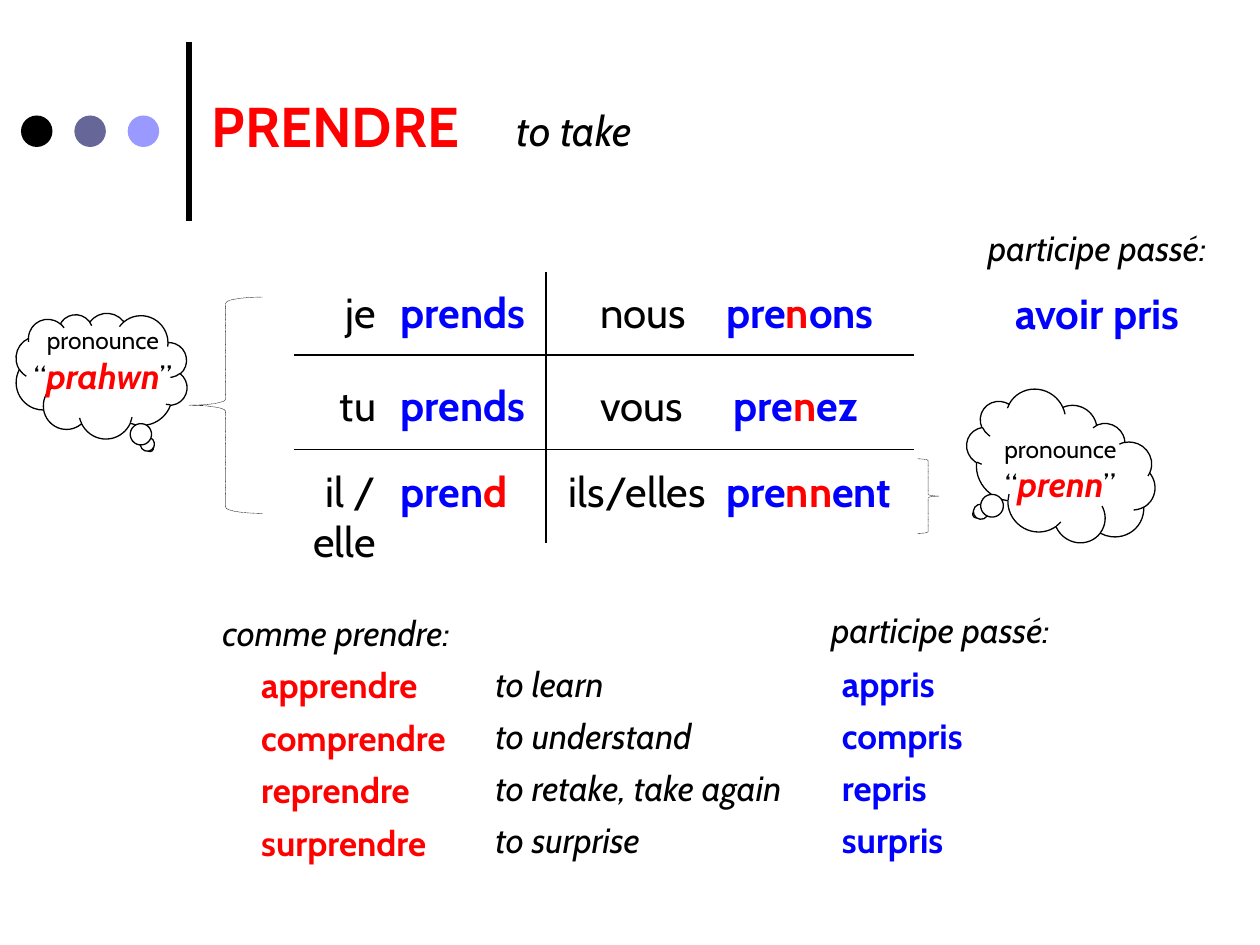
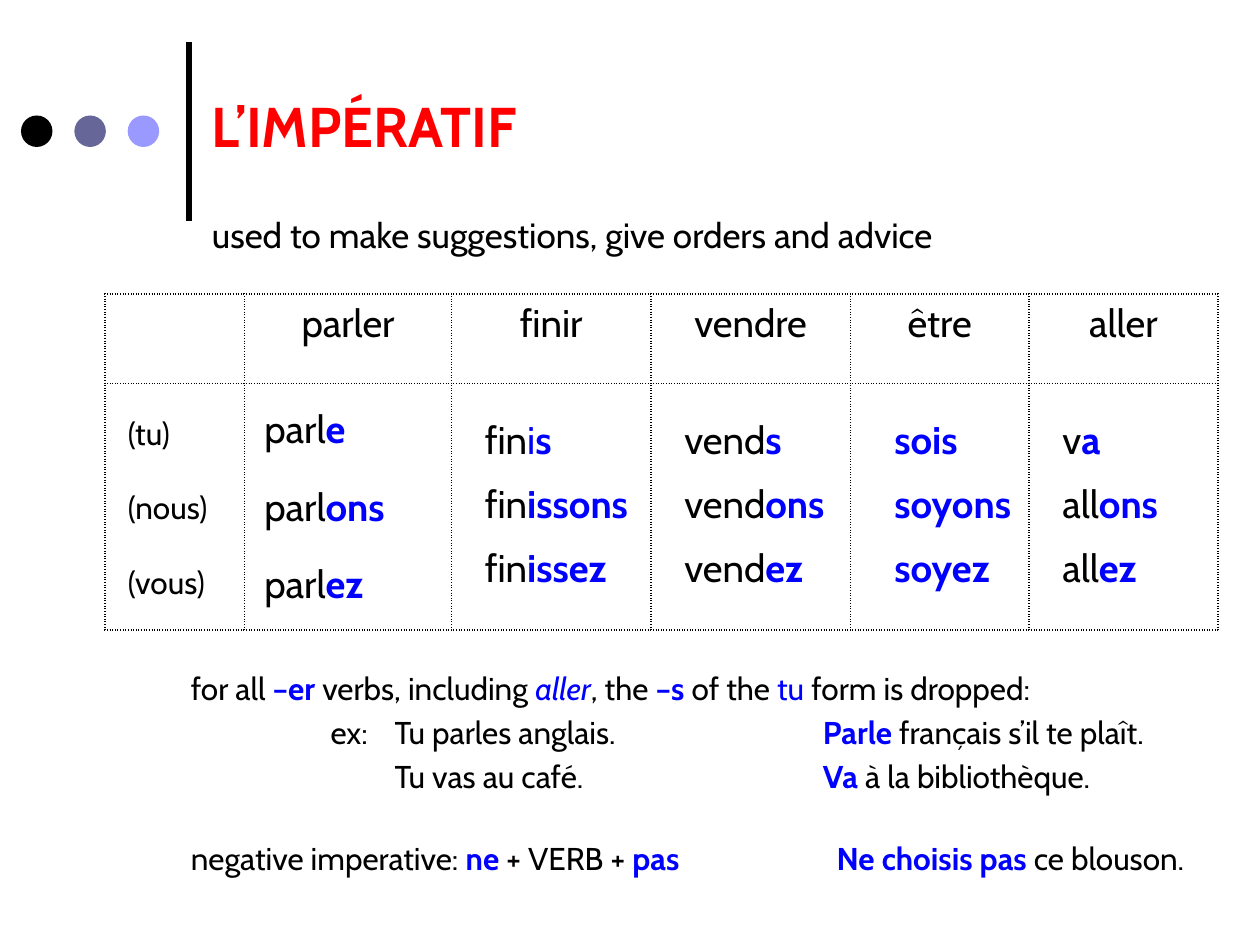
from lxml.etree import SubElement
from pptx import Presentation
from pptx.dml.color import RGBColor
from pptx.enum.dml import MSO_LINE
from pptx.enum.shapes import MSO_CONNECTOR, MSO_SHAPE as Shape
from pptx.enum.text import PP_ALIGN as Align
from pptx.oxml.ns import qn
from pptx.util import Inches, Pt

FONT = "Cabin"
BLACK, WHITE, RED, BLUE = "000000", "FFFFFF", "FF0000", "0000FF"
DOTS = (BLACK, "666699", "9999FF")
COLS, ROWS = 120, 90
UNIT = Inches(10) // COLS
STYLES = {
    "K": (BLACK, False, False),
    "I": (BLACK, False, True),
    "B": (BLUE, True, False),
    "b": (BLUE, False, False),
    "i": (BLUE, False, True),
    "R": (RED, True, False),
    "X": (RED, True, True),
}


def rgb(color):
    """Turn a hex string into a colour."""
    return RGBColor.from_string(color)


def emu(*cells):
    """Turn grid cells into lengths."""
    return [round(c * UNIT) for c in cells]


def inside(box, x, y, w, h):
    """Place a box relative to the corner of another one."""
    return box[0] + x, box[1] + y, w, h


def add_runs(p, markup, size):
    """Fill a paragraph from 'style:text' pieces joined by bars; a style may carry its own size."""
    for piece in markup.split("|"):
        key, _, text = piece.partition(":")
        color, bold, italic = STYLES[key[0]]
        r = p.add_run()
        r.text = text
        f = r.font
        f.name, f.bold, f.italic = FONT, bold, italic
        f.size = Pt(int(key[1:] or size))
        f.color.rgb = rgb(color)


def set_tabs(p, stops):
    """Give a paragraph its tab stops, in cells."""
    tabs = SubElement(p._p.get_or_add_pPr(), qn("a:tabLst"))
    for pos in emu(*stops):
        SubElement(tabs, qn("a:tab"), pos=str(pos), algn="l")


def add_text(shapes, box, *lines, size=20, align=Align.LEFT, gap=0, spacing=None, tabs=()):
    """Add a text box with one paragraph for each line."""
    tf = shapes.add_textbox(*emu(*box)).text_frame
    tf.word_wrap = True
    for i, markup in enumerate(lines):
        p = tf.add_paragraph() if i else tf.paragraphs[0]
        p.alignment = align
        p.space_before = Pt(gap if i else 0)
        if spacing:
            p.line_spacing = spacing
        if tabs:
            set_tabs(p, tabs)
        add_runs(p, markup, size)
    return tf


def add_line(s, x1, y1, x2, y2, width=0.75):
    """Draw a straight black line."""
    c = s.shapes.add_connector(MSO_CONNECTOR.STRAIGHT, *emu(x1, y1, x2, y2))
    c.line.color.rgb = rgb(BLACK)
    c.line.width = Pt(width)
    SubElement(c._element.spPr, qn("a:effectLst"))


def add_figure(shapes, kind, box, fill=None, line=None, adj=(), flip=False):
    """Add a preset shape without a shadow."""
    sp = shapes.add_shape(kind, *emu(*box))
    sp.shadow.inherit = False
    if fill:
        sp.fill.solid()
        sp.fill.fore_color.rgb = rgb(fill)
    else:
        sp.fill.background()
    if line:
        sp.line.color.rgb = rgb(BLACK)
        sp.line.width = Pt(line)
    else:
        sp.line.fill.background()
    for i, value in enumerate(adj):
        sp.adjustments[i] = value
    if flip:
        sp._element.spPr.xfrm.set("flipH", "1")
    return sp


def add_title(s, box, title):
    """Draw the dots, the upright bar and the red title."""
    add_line(s, box[0] + 18, box[1] + 21, box[0] + 18, box[1] + 4, 3)
    for i, color in enumerate(DOTS):
        add_figure(s.shapes, Shape.OVAL, inside(box, 2 + 5.08 * i, 11, 3, 3), color)
    add_text(s.shapes, inside(box, 19, 8.1, 69, 7.7), "R:" + title, size=32)


def add_conjugation(s, box):
    """Write the six verb forms around the ruled lines."""
    x, y, w, h = box
    for row in (7.9, 16.9):
        add_line(s, x + 4, y + row, x + w, y + row)
    add_line(s, x + 28, y, x + 28, y + h)
    forms = (
        (0.8, "je", "B:prends", 32, "nous", 44, "B:pre|R:n|B:ons"),
        (9.7, "tu", "B:prends", 32, "vous", 44.7, "B:pre|R:n|B:ez"),
        (17.8, "il / elle", "B:pren|R:d", 29, "ils/elles", 44, "B:pre|R:nn|B:ent"),
    )
    for top, one, verb, many_x, many, verbs_x, verbs in forms:
        add_text(s.shapes, inside(box, 0, top, 13, 6), "K:" + one, size=24, align=Align.RIGHT)
        add_text(s.shapes, inside(box, 13, top, 15, 6), verb, size=24)
        add_text(s.shapes, inside(box, many_x, top, 16, 6), "K:" + many, size=24)
        add_text(s.shapes, inside(box, verbs_x, top, 25, 6), verbs, size=24)


def add_sound(s, box, sound, text_box, turn, flip=False):
    """Group a thought cloud with the way a form is pronounced."""
    shapes = s.shapes.add_group_shape().shapes
    cloud = add_figure(shapes, Shape.CLOUD_CALLOUT, box, WHITE, 0.75, (-0.208, 0.625), flip)
    cloud.rotation = turn
    add_text(shapes, inside(box, *text_box), "K14:pronounce", f"K:“|X20:{sound}|K:”",
             size=18, align=Align.CENTER)


def add_brace(s, box, flip=False):
    """Draw a dotted brace."""
    sp = add_figure(s.shapes, Shape.LEFT_BRACE, box, line=0.25, adj=(0.083, 0.5), flip=flip)
    sp.line.dash_style = MSO_LINE.ROUND_DOT


def add_family(s, box):
    """List the verbs of the same family with meanings and participles."""
    verbs = (
        ("apprendre", "to learn", "appris"),
        ("comprendre", "to understand", "compris"),
        ("reprendre", "to retake, take again", "repris"),
        ("surprendre", "to surprise", "surpris"),
    )
    names = ["R:" + name for name, _, _ in verbs]
    tf = add_text(s.shapes, inside(box, 0, 0.2, 26, 28), "I:comme prendre:", *names, gap=6)
    for p in tf.paragraphs[1:]:
        p._p.get_or_add_pPr().set("marL", str(emu(3.7)[0]))
    add_text(s.shapes, inside(box, 58, 0, 25, 5.3), "I:participe passé:")
    for i, (_, meaning, participle) in enumerate(verbs):
        top = 5.15 + 4.95 * i
        add_text(s.shapes, inside(box, 26, top, 30, 5.3), "I:" + meaning)
        add_text(s.shapes, inside(box, 59, top, 25, 5.3), "B:" + participle)


def add_participle(s, box):
    """Write the past participle under its heading."""
    add_text(s.shapes, inside(box, 0, 0, 27, 5.3), "I:participe passé:", align=Align.CENTER)
    add_text(s.shapes, inside(box, 0, 5.8, 27, 6), "B:avoir pris", size=24, align=Align.CENTER)


def set_borders(cell):
    """Give a cell dotted borders on all sides."""
    pr = cell._tc.get_or_add_tcPr()
    for i, side in enumerate(("lnL", "lnR", "lnT", "lnB")):
        ln = pr.makeelement(qn("a:" + side), {"w": str(Pt(1))})
        fill = SubElement(ln, qn("a:solidFill"))
        SubElement(fill, qn("a:srgbClr"), val=BLACK)
        SubElement(ln, qn("a:prstDash"), val="dot")
        pr.insert(i, ln)


def add_imperatives(s, box):
    """Build the table of imperatives and the columns of forms over it."""
    widths, heights = (13.3, 19.7, 19, 19, 17, 18), (8.5, 23.5)
    heads = ("", "parler", "finir", "vendre", "être", "aller")
    table = s.shapes.add_table(2, len(heads), *emu(*box)).table
    table.first_row = table.horz_banding = False
    for col, width in zip(table.columns, emu(*widths)):
        col.width = width
    for row, height in zip(table.rows, emu(*heights)):
        row.height = height
    for cell in table.iter_cells():
        cell.fill.background()
        set_borders(cell)
    for cell, head in zip(table.rows[0].cells, heads):
        if head:
            p = cell.text_frame.paragraphs[0]
            p.alignment = Align.CENTER
            add_runs(p, "K:" + head, 22)
    add_text(s.shapes, inside(box, 1, 10.8, 12, 19), "K:(tu)", "K:(nous)", "K:(vous)",
             size=18, gap=21)
    columns = (
        (14, 10, 17, 18, "K:parl|B:e", "K:parl|B:ons", "K:parl|B:ez"),
        (35, 11, 19, 10.4, "K:fin|b:i|B:s", "K:fin|B:issons", "K:fin|B:issez"),
        (54, 11, 23, 10.4, "K:vend|B:s", "K:vend|B:ons", "K:vend|B:ez"),
        (74, 11, 16, 10.4, "B:sois", "B:soyons", "B:soyez"),
        (90, 11, 12, 10.4, "K:v|B:a", "K:all|B:ons", "K:all|B:ez"),
    )
    for x, y, w, gap, *forms in columns:
        add_text(s.shapes, inside(box, x, y, w, 19), *forms, size=22, gap=gap)


def add_rules(s, box):
    """Write the spelling rule, its examples and the negative form."""
    add_text(
        s.shapes, inside(box, 0, 0, 99, 13),
        "K:for all |B:–er |K:verbs, including |i:aller|K:, the |B:–s |K:of the |b:tu"
        "|K: form is dropped:",
        "K:\tex:\tTu parles anglais.\t|B:Parle|K: français s’il te plaît.",
        "K:\t\tTu vas au café.\t|B:Va |K:à la bibliothèque.",
        size=18, gap=8.7, spacing=0.75, tabs=(13.3, 19.4, 60.2))
    add_text(
        s.shapes, inside(box, 0, 16, 99, 5),
        "K:negative imperative: |B:ne|K: + VERB + |B:pas\tNe choisis pas |K:ce blouson.",
        size=18, spacing=0.8, tabs=(61.5,))


def build_prendre(s, box):
    """Lay out the slide on the verb prendre."""
    add_title(s, box, "PRENDRE")
    add_text(s.shapes, inside(box, 48, 9.4, 25, 6), "I:to take", size=24)
    add_conjugation(s, inside(box, 24, 25.9, 63, 25.8))
    add_family(s, inside(box, 20, 57.4, 96, 28))
    add_participle(s, inside(box, 91, 21, 27, 12))
    add_sound(s, inside(box, 1.5, 29.6, 16.4, 12.2), "prahwn", (-0.5, 0.8, 17.6, 8), 350.8, True)
    add_sound(s, inside(box, 91.7, 38.2, 18.4, 13), "prenn", (0.3, 2.5, 18, 8), 36.4)
    add_brace(s, inside(box, 18, 28.3, 7, 20.6))
    add_brace(s, inside(box, 87.4, 43.7, 2, 7.1), True)


def build_imperatif(s, box):
    """Lay out the slide on the imperative."""
    add_title(s, box, "L’IMPÉRATIF")
    add_text(s.shapes, inside(box, 19, 19.7, 86, 5.3),
             "K:used to make suggestions, give orders and advice")
    add_imperatives(s, inside(box, 10, 28, 106, 32))
    add_rules(s, inside(box, 17, 64, 99, 21))


def main():
    """Build and save the presentation."""
    prs = Presentation()
    prs.slide_width, prs.slide_height = emu(COLS, ROWS)
    for build in (build_prendre, build_imperatif):
        build(prs.slides.add_slide(prs.slide_layouts[6]), (0, 0, COLS, ROWS))
    prs.save("out.pptx")


if __name__ == "__main__":
    main()
